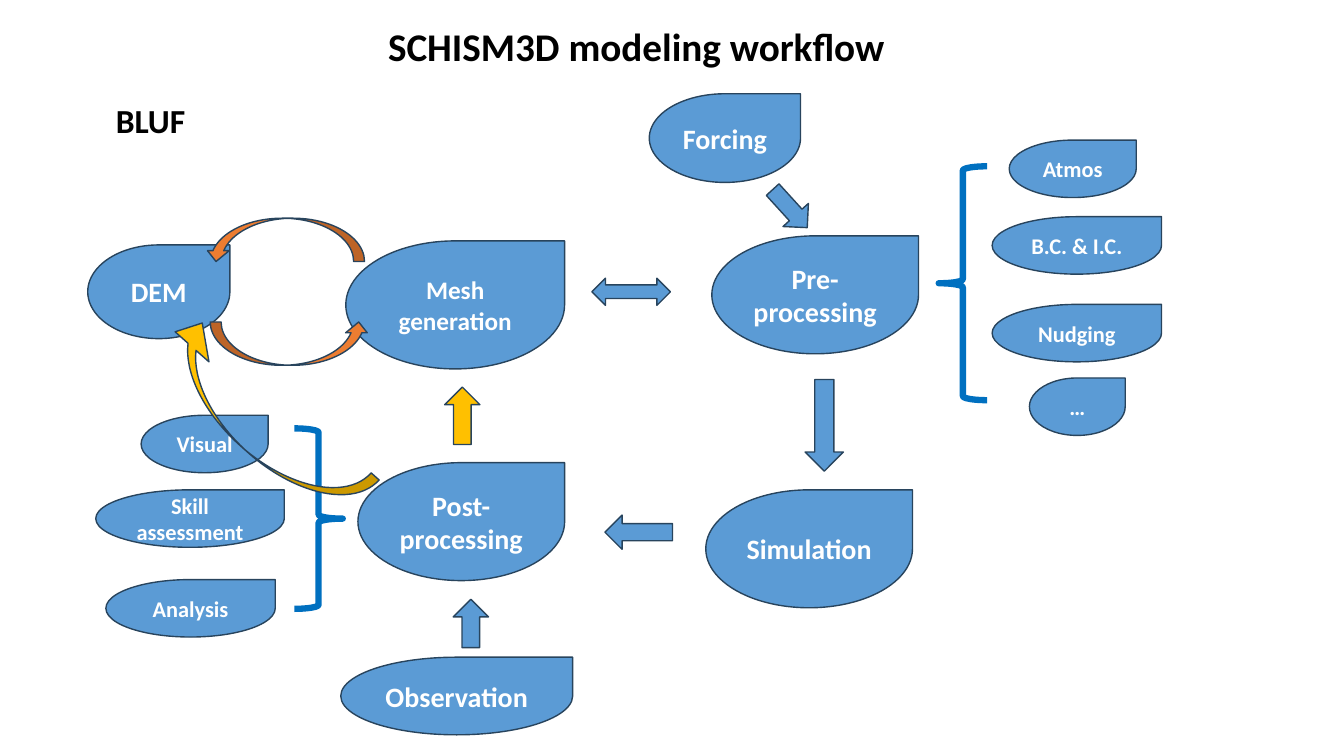
from pptx import Presentation
from pptx.dml.color import RGBColor
from pptx.enum.shapes import MSO_SHAPE
from pptx.enum.text import MSO_ANCHOR, MSO_AUTO_SIZE, PP_ALIGN
from pptx.util import Inches, Pt

BLUE = RGBColor(0x5B, 0x9B, 0xD5)
NAVY = RGBColor(0x28, 0x44, 0x5D)
BRACE = RGBColor(0x00, 0x70, 0xC0)
GOLD = RGBColor(0xFF, 0xC0, 0x00)
ORANGE = RGBColor(0xED, 0x7D, 0x31)
WHITE = RGBColor(0xFF, 0xFF, 0xFF)
BLACK = RGBColor(0x00, 0x00, 0x00)

prs = Presentation()
prs.slide_width, prs.slide_height = Inches(13.33), Inches(7.5)
s = prs.slides.add_slide(prs.slide_layouts[6])

# Grid: 13.33 columns by 7.5 rows
COL, ROW = prs.slide_width / 13.33, prs.slide_height / 7.5


def write(sp, text, size=20, color=WHITE, align=PP_ALIGN.CENTER,
          anchor=MSO_ANCHOR.MIDDLE, wrap=True, fit=MSO_AUTO_SIZE.NONE):
    tf = sp.text_frame
    tf.word_wrap, tf.auto_size, tf.vertical_anchor = wrap, fit, anchor
    p = tf.paragraphs[0]
    p.alignment = align
    r = p.add_run()
    r.text = text
    r.font.name, r.font.size, r.font.bold = "Calibri", Pt(size), True
    r.font.color.rgb = color


def draw(kind, x, y, w, h, fill=BLUE, line=NAVY, weight=1, rot=0, flip=""):
    sp = s.shapes.add_shape(kind, round(x * COL), round(y * ROW),
                            round(w * COL), round(h * ROW))
    sp.shadow.inherit = False
    if fill is None:
        sp.fill.background()
    else:
        sp.fill.solid()
        sp.fill.fore_color.rgb = fill
    sp.line.color.rgb, sp.line.width = line, Pt(weight)
    sp.rotation = rot
    for axis in flip:
        sp._element.spPr.xfrm.set("flip" + axis, "1")
    return sp


# Title
tb = s.shapes.add_textbox(round(3.75 * COL), round(0.17 * ROW),
                          round(5.18 * COL), round(0.57 * ROW))
write(tb, "SCHISM3D modeling workflow", size=28, color=BLACK, align=PP_ALIGN.LEFT,
      anchor=MSO_ANCHOR.TOP, fit=MSO_AUTO_SIZE.SHAPE_TO_FIT_TEXT)

# Workflow stages
stages = [
    ("DEM", 0.87, 2.43, 1.41, 0.93, 20),
    ("Mesh generation", 3.43, 2.39, 2.17, 1.27, 18),
    ("Pre-processing", 7.06, 2.34, 2.05, 1.17, 20),
    ("Post-processing", 3.55, 4.59, 2.05, 1.17, 20),
    ("Simulation", 7, 4.86, 2.05, 1.17, 20),
    ("Forcing", 6.44, 0.93, 1.5, 0.88, 20),
    ("Observation", 3.38, 6.52, 2.3, 0.77, 20),
]
for text, x, y, w, h, size in stages:
    write(draw(MSO_SHAPE.TEAR, x, y, w, h), text, size=size)

# Forcing inputs (right) and post-processing outputs (left)
details = [
    ("Atmos", 10.01, 1.39, 1.26),
    ("B.C. & I.C.", 9.84, 2.15, 1.68),
    ("Nudging", 9.84, 3.02, 1.68),
    ("…", 10.21, 3.75, 0.95),
    ("Visual", 1.4, 4.12, 1.26),
    ("Skill assessment", 0.95, 4.86, 1.87),
    ("Analysis", 1.05, 5.75, 1.68),
]
for text, x, y, w in details:
    write(draw(MSO_SHAPE.TEAR, x, y, w, 0.57), text, size=16)

# Braces
for x, y, h, flip in [(9.31, 1.65, 2.32, ""), (2.92, 4.25, 1.79, "H")]:
    draw(MSO_SHAPE.LEFT_BRACE, x, y, 0.48, h, fill=None, line=BRACE,
         weight=4.5, flip=flip)

# Straight arrows between stages
arrows = [
    (MSO_SHAPE.LEFT_RIGHT_ARROW, 5.87, 2.76, 0.78, 0.27, 0, BLUE),
    (MSO_SHAPE.RIGHT_ARROW, 7.58, 1.9, 0.51, 0.34, 47.7, BLUE),
    (MSO_SHAPE.RIGHT_ARROW, 7.72, 4.03, 0.91, 0.38, 90, BLUE),
    (MSO_SHAPE.LEFT_ARROW, 6, 5.11, 0.67, 0.34, 0, BLUE),
    (MSO_SHAPE.LEFT_ARROW, 4.43, 6.01, 0.48, 0.35, 90, BLUE),
    (MSO_SHAPE.LEFT_ARROW, 4.3, 3.95, 0.57, 0.35, 90, GOLD),
]
for kind, x, y, w, h, rot, fill in arrows:
    draw(kind, x, y, w, h, fill=fill, rot=rot)

# Curved arrow from post-processing back to DEM
sp = draw(MSO_SHAPE.CURVED_LEFT_ARROW, 2.25, 2.87, 0.66, 2.57, fill=GOLD, rot=131.6)
for i, value in enumerate([0.16, 0.68, 0.37]):
    sp.adjustments[i] = value

# Loop between DEM and mesh generation
for x, y, flip in [(2.61, 1.59, ""), (2.66, 2.62, "HV")]:
    draw(MSO_SHAPE.CURVED_RIGHT_ARROW, x, y, 0.43, 1.58, fill=ORANGE, rot=90, flip=flip)

# Section label
tb = s.shapes.add_textbox(round(1.05 * COL), round(0.94 * ROW),
                          round(0.9 * COL), round(0.5 * ROW))
write(tb, "BLUF", size=24, color=BLACK, align=PP_ALIGN.LEFT, anchor=MSO_ANCHOR.TOP,
      wrap=False, fit=MSO_AUTO_SIZE.SHAPE_TO_FIT_TEXT)

prs.save("out.pptx")
